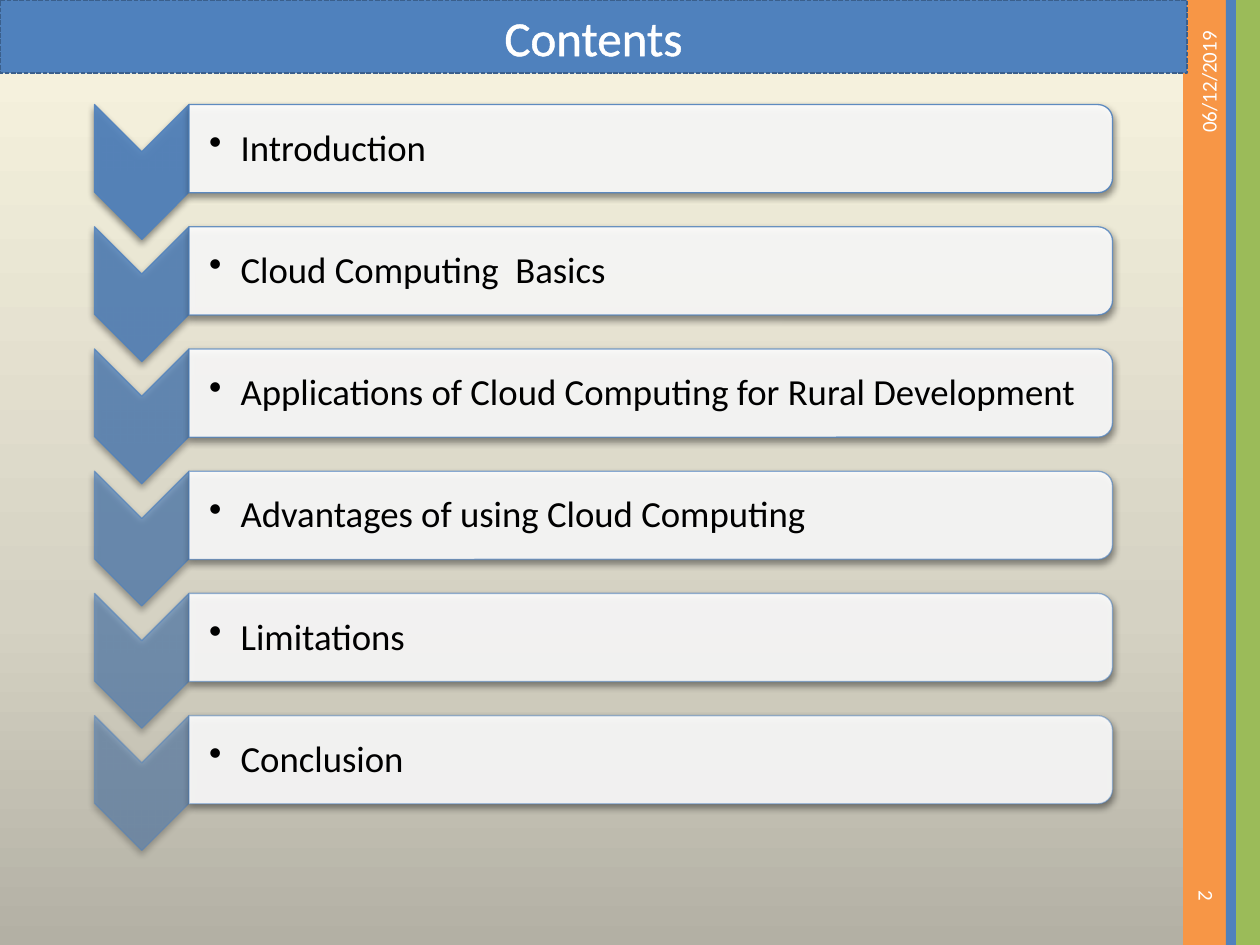
from copy import deepcopy
from dataclasses import dataclass

from lxml.etree import SubElement
from pptx import Presentation
from pptx.dml.color import RGBColor
from pptx.enum.dml import MSO_LINE
from pptx.enum.shapes import MSO_SHAPE
from pptx.enum.text import MSO_ANCHOR, PP_ALIGN
from pptx.oxml import parse_xml
from pptx.oxml.ns import nsdecls, qn
from pptx.shapes.autoshape import Shape
from pptx.slide import Slide
from pptx.text.text import _Paragraph, _Run
from pptx.util import Inches, Pt


@dataclass(frozen=True)
class Theme:
    font: str = "Calibri"
    blue: str = "4F81BD"
    dark_blue: str = "3A5F8C"
    orange: str = "F79646"
    green: str = "9BBB59"
    white: str = "FFFFFF"
    black: str = "000000"
    background: tuple = ((0, "B3B0A4"), (0.35, "D5D2C3"), (1, "F9F5E0"))
    title_size: float = 28
    item_size: float = 21
    small_size: float = 12
    card_opacity: int = 90


@dataclass(frozen=True)
class Box:
    left: float
    top: float
    width: float
    height: float
    rotation: int = 0

    def frame(self) -> tuple:
        width, height = self.width, self.height
        if self.rotation in (90, 270):
            width, height = height, width
        left = self.left + (self.width - width) / 2
        top = self.top + (self.height - height) / 2
        return Inches(left), Inches(top), Inches(width), Inches(height)


@dataclass(frozen=True)
class Bar:
    box: Box
    color: str


@dataclass(frozen=True)
class Label:
    text: str
    box: Box


@dataclass(frozen=True)
class Item:
    text: str
    top: float
    opacity: int


THEME = Theme()
BARS = (
    Bar(Box(9.39, 0, 0.35, 7.5, 270), THEME.orange),
    Bar(Box(9.81, 0, 0.19, 7.5, 270), THEME.green),
    Bar(Box(9.73, 0, 0.08, 7.5), THEME.blue),
)
LABELS = (
    Label("06/12/2019", Box(9.39, 0.15, 0.4, 2.33, 270)),
    Label("2", Box(9.38, 6.19, 0.4, 1.06, 90)),
)
TOPICS = (
    "Introduction",
    "Cloud Computing  Basics",
    "Applications of Cloud Computing for Rural Development",
    "Advantages of using Cloud Computing",
    "Limitations",
    "Conclusion",
)
FIRST_TOP, PITCH = 0.83, 0.97
ITEMS = [
    Item(topic, FIRST_TOP + index * PITCH, 90 - 8 * index)
    for index, topic in enumerate(TOPICS)
]


def paint_background(page: Slide) -> None:
    fill = page.background.fill
    fill.gradient()
    fill.gradient_angle = 90
    first = page._element.xpath(".//a:gsLst/a:gs")[0]
    first.addnext(deepcopy(first))
    for stop, (position, color) in zip(fill.gradient_stops, THEME.background):
        stop.position = position
        stop.color.rgb = RGBColor.from_string(color)


def add_block(page: Slide, kind: MSO_SHAPE, box: Box, color: str) -> Shape:
    shape = page.shapes.add_shape(kind, *box.frame())
    shape.rotation = box.rotation
    shape.shadow.inherit = False
    shape.fill.solid()
    shape.fill.fore_color.rgb = RGBColor.from_string(color)
    shape.line.fill.background()
    return shape


def outline(shape: Shape, color: str, width: float) -> None:
    shape.line.color.rgb = RGBColor.from_string(color)
    shape.line.width = Pt(width)


def add_text_box(page: Slide, box: Box) -> Shape:
    shape = page.shapes.add_textbox(*box.frame())
    shape.rotation = box.rotation
    shape.text_frame.word_wrap = True
    shape.text_frame.vertical_anchor = MSO_ANCHOR.MIDDLE
    return shape


def add_span(para: _Paragraph, text: str, size: float, color: str) -> _Run:
    span = para.add_run()
    span.text = text
    span.font.name = THEME.font
    span.font.size = Pt(size)
    span.font.color.rgb = RGBColor.from_string(color)
    return span


def set_opacity(shape: Shape, fill_opacity: int, line_opacity: int) -> None:
    properties = shape._element.spPr
    for route, opacity in (
        ("a:solidFill/a:srgbClr", fill_opacity),
        ("a:ln/a:solidFill/a:srgbClr", line_opacity),
    ):
        color = properties.xpath(route)[0]
        SubElement(color, qn("a:alpha")).set("val", str(opacity * 1000))


def add_shadow(shape: Shape) -> None:
    effects = shape._element.spPr.find(qn("a:effectLst"))
    effects.append(parse_xml(
        f'<a:outerShdw {nsdecls("a")} blurRad="{Pt(4)}" dist="{Pt(2)}" '
        f'dir="5400000" rotWithShape="0"><a:srgbClr val="{THEME.black}">'
        '<a:alpha val="45000"/></a:srgbClr></a:outerShdw>'
    ))


def add_bullet(para: _Paragraph) -> None:
    properties = para._p.get_or_add_pPr()
    properties.set("marL", str(Inches(0.25)))
    properties.set("indent", str(Inches(-0.25)))
    SubElement(properties, qn("a:buChar")).set("char", "•")


def add_label(page: Slide, label: Label) -> None:
    para = add_text_box(page, label.box).text_frame.paragraphs[0]
    para.alignment = PP_ALIGN.RIGHT
    add_span(para, label.text, THEME.small_size, THEME.white)


def add_title(page: Slide, text: str) -> None:
    banner = add_block(page, MSO_SHAPE.RECTANGLE, Box(0, 0, 9.42, 0.58), THEME.blue)
    outline(banner, THEME.dark_blue, 0.9)
    banner.line.dash_style = MSO_LINE.SQUARE_DOT
    banner.text_frame.vertical_anchor = MSO_ANCHOR.MIDDLE
    para = banner.text_frame.paragraphs[0]
    para.alignment = PP_ALIGN.CENTER
    span = add_span(para, text, THEME.title_size, THEME.white)
    span._r.get_or_add_rPr().insert(0, parse_xml(
        f'<a:ln {nsdecls("a")} w="{Pt(1.45)}"><a:solidFill>'
        f'<a:srgbClr val="{THEME.white}"/></a:solidFill></a:ln>'
    ))


def add_item(page: Slide, item: Item) -> None:
    chevron_box = Box(0.75, item.top, 0.75, 1.07, 90)
    card_box = Box(1.5, item.top, 7.33, 0.7, 90)
    for kind, box, color, opacity in (
        (MSO_SHAPE.CHEVRON, chevron_box, THEME.blue, item.opacity),
        (MSO_SHAPE.ROUND_2_SAME_RECTANGLE, card_box, THEME.white, THEME.card_opacity),
    ):
        shape = add_block(page, kind, box, color)
        outline(shape, THEME.blue, 0.75)
        set_opacity(shape, opacity, item.opacity)
        add_shadow(shape)

    frame = add_text_box(page, Box(1.5, item.top + 0.04, 7.3, 0.63)).text_frame
    frame.margin_left = Inches(0.16)
    frame.margin_top = frame.margin_right = frame.margin_bottom = Inches(0.01)
    para = frame.paragraphs[0]
    para.level = 1
    para.line_spacing = 0.9
    para.space_after = Pt(3)
    add_bullet(para)
    add_span(para, item.text, THEME.item_size, THEME.black)


def main() -> None:
    deck = Presentation()
    deck.slide_width, deck.slide_height = Inches(10), Inches(7.5)
    page = deck.slides.add_slide(deck.slide_layouts[6])
    paint_background(page)
    for bar in BARS:
        add_block(page, MSO_SHAPE.RECTANGLE, bar.box, bar.color)
    for label in LABELS:
        add_label(page, label)
    add_title(page, "Contents")
    for item in ITEMS:
        add_item(page, item)
    deck.save("out.pptx")


if __name__ == "__main__":
    main()
